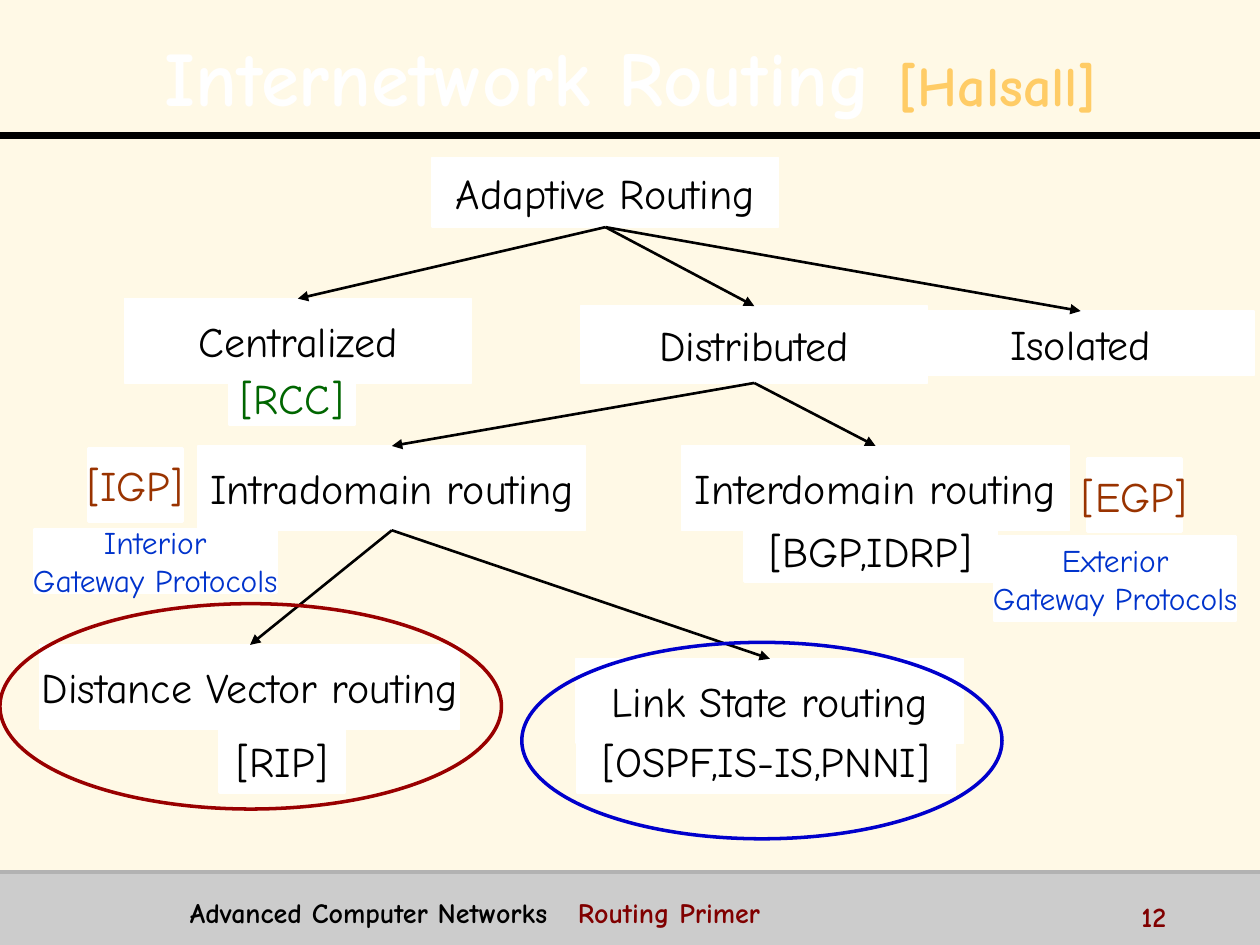
from lxml import etree
from pptx import Presentation
from pptx.dml.color import RGBColor
from pptx.enum import shapes, text
from pptx.oxml import parse_xml
from pptx.oxml.ns import nsdecls, qn
from pptx.util import Cm, Pt

FONT = "Comic Neue"
BLACK = RGBColor(0x00, 0x00, 0x00)
WHITE = RGBColor(0xFF, 0xFF, 0xFF)
CREAM = RGBColor(0xFF, 0xF9, 0xE6)
GREY = RGBColor(0xCC, 0xCC, 0xCC)
MID_GREY = RGBColor(0xB2, 0xB2, 0xB2)
GOLD = RGBColor(0xFF, 0xCC, 0x66)
MAROON = RGBColor(0x80, 0x00, 0x00)
RUST = RGBColor(0x99, 0x33, 0x00)
GREEN = RGBColor(0x00, 0x66, 0x00)
BLUE = RGBColor(0x00, 0x33, 0xCC)
OVAL_RED = RGBColor(0x99, 0x00, 0x00)
OVAL_BLUE = RGBColor(0x00, 0x00, 0xCC)


def add_run(p, content, size=24, color=BLACK, bold=False):
    r = p.add_run()
    r.text = content
    r.font.name = FONT
    r.font.size = Pt(size)
    r.font.bold = bold
    r.font.color.rgb = color
    return r


def add_line(x1, y1, x2, y2, color, width):
    """Add a straight connector without the theme shadow."""
    line = s.shapes.add_connector(shapes.MSO_CONNECTOR.STRAIGHT, Cm(x1), Cm(y1), Cm(x2), Cm(y2))
    line.line.color.rgb = color
    line.line.width = Pt(width)
    etree.SubElement(line._element.spPr, qn("a:effectLst"))
    return line


prs = Presentation()
prs.slide_width, prs.slide_height = Cm(25.4), Cm(19.05)
s = prs.slides.add_slide(prs.slide_layouts[5])
s.background.fill.solid()
s.background.fill.fore_color.rgb = CREAM

# Footer band and rules
band = s.shapes.add_shape(shapes.MSO_SHAPE.RECTANGLE, 0, Cm(17.58), Cm(25.4), Cm(1.47))
band.shadow.inherit = False
band.fill.solid()
band.fill.fore_color.rgb = GREY
band.line.fill.background()
add_line(0, 2.74, 25.4, 2.74, BLACK, 4)
add_line(0, 17.58, 25.4, 17.58, MID_GREY, 2)

# Title
title = s.shapes.title
title.left, title.top, title.width, title.height = Cm(0.51), Cm(0.33), Cm(24.41), Cm(2.21)
tf = title.text_frame
tf.vertical_anchor = text.MSO_ANCHOR.MIDDLE
p = tf.paragraphs[0]
p.alignment = text.PP_ALIGN.CENTER
p.line_spacing = 1.1
for content, size, color in [("Internetwork Routing ", 44, WHITE), ("[Halsall]", 32, GOLD)]:
    r = add_run(p, content, size=size, color=color, bold=True)
    r.font.fill._xPr.find(qn("a:solidFill")).addnext(parse_xml(
        f'<a:effectLst {nsdecls("a")}><a:outerShdw dist="38100" dir="2700000">'
        '<a:srgbClr val="000000"/></a:outerShdw></a:effectLst>'))

# Footer texts
footer = s.shapes.add_textbox(Cm(3.58), Cm(17.93), Cm(18.49), Cm(0.79))
footer.text_frame.word_wrap = True
p = footer.text_frame.paragraphs[0]
tabs = etree.SubElement(p._p.get_or_add_pPr(), qn("a:tabLst"))
etree.SubElement(tabs, qn("a:tab"), pos=str(Cm(7.82)), algn="l")
add_run(p, "Advanced Computer Networks\t", size=16, bold=True)
add_run(p, "Routing Primer", size=16, color=MAROON, bold=True)
number = s.shapes.add_textbox(Cm(22.76), Cm(18.01), Cm(2.54), Cm(0.64))
number.text_frame.word_wrap = True
add_run(number.text_frame.paragraphs[0], "12", size=16, color=MAROON, bold=True)

# Boxes: text, left, top, width, height
nodes = [
    ("Adaptive Routing", 8.71, 3.18, 6.99, 1.4),
    ("Centralized", 2.51, 6.02, 6.99, 1.7),
    ("Distributed", 11.71, 6.17, 6.99, 1.55),
    ("Isolated", 18.29, 6.27, 6.99, 1.3),
    ("Intradomain routing", 3.99, 8.99, 7.82, 1.7),
    ("Interdomain routing", 13.74, 8.99, 7.82, 1.7),
    ("Distance Vector routing", 0.81, 13, 8.46, 1.7),
    ("Link State routing", 11.61, 13.28, 7.82, 1.7),
]
labels = [
    ("[IGP]", 1.78, 9.04, 1.9, 1.47, 24, RUST),
    ("[EGP]", 21.92, 9.25, 1.9, 1.47, 24, RUST),
    ("[BGP,IDRP]", 15.01, 10.46, 5.08, 1.27, 24, BLACK),
    ("[OSPF,IS-IS,PNNI]", 11.63, 14.71, 7.62, 1.27, 24, BLACK),
    ("[RIP]", 4.42, 14.71, 2.54, 1.27, 24, BLACK),
    ("[RCC]", 4.62, 7.49, 2.54, 1.07, 24, GREEN),
    ("Interior\nGateway Protocols", 0.69, 10.67, 4.88, 1.27, 18, BLUE),
    ("Exterior\nGateway Protocols", 20.04, 10.82, 4.88, 1.7, 18, BLUE),
]
boxes = {}
for content, x, y, w, h, size, color, border in (
        [node + (24, BLACK, 0.75) for node in nodes] + [label + (1.5,) for label in labels]):
    sp = s.shapes.add_shape(shapes.MSO_SHAPE.RECTANGLE, Cm(x), Cm(y), Cm(w), Cm(h))
    sp.shadow.inherit = False
    sp.fill.solid()
    sp.fill.fore_color.rgb = WHITE
    sp.line.color.rgb = WHITE
    sp.line.width = Pt(border)
    tf = sp.text_frame
    tf.word_wrap = False
    tf.vertical_anchor = text.MSO_ANCHOR.MIDDLE
    for i, row in enumerate(content.split("\n")):
        p = tf.add_paragraph() if i else tf.paragraphs[0]
        p.alignment = text.PP_ALIGN.CENTER
        add_run(p, row, size=size, color=color)
    boxes[content] = sp

# Tree branches, from bottom middle of the parent to top middle of the child
branches = {
    "Adaptive Routing": ["Centralized", "Distributed", "Isolated"],
    "Distributed": ["Intradomain routing", "Interdomain routing"],
    "Intradomain routing": ["Distance Vector routing", "Link State routing"],
}
for parent, children in branches.items():
    for child in children:
        arrow = add_line(0, 0, 1, 1, BLACK, 1.5)
        arrow.begin_connect(boxes[parent], 2)
        arrow.end_connect(boxes[child], 0)
        etree.SubElement(arrow.line._get_or_add_ln(), qn("a:tailEnd"), type="triangle")

# Ovals around the two intradomain families
for x, y, w, h, color in [(10.52, 12.95, 9.68, 3.96, OVAL_BLUE), (0, 12.17, 10.11, 4.14, OVAL_RED)]:
    oval = s.shapes.add_shape(shapes.MSO_SHAPE.OVAL, Cm(x), Cm(y), Cm(w), Cm(h))
    oval.shadow.inherit = False
    oval.fill.background()
    oval.line.color.rgb = color
    oval.line.width = Pt(2)

prs.save("out.pptx")
